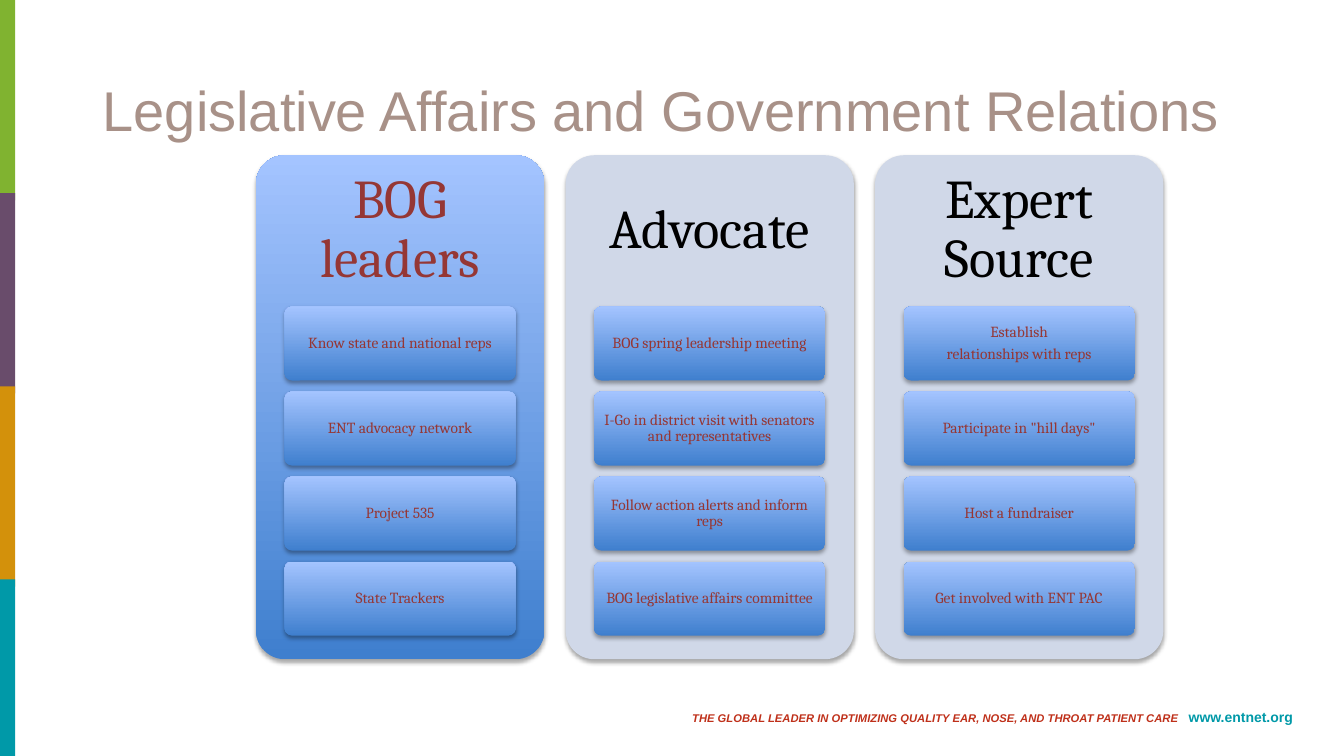
from lxml.etree import SubElement
from pptx import Presentation
from pptx.dml.color import RGBColor
from pptx.enum.shapes import MSO_SHAPE
from pptx.enum.text import MSO_ANCHOR, PP_ALIGN
from pptx.oxml.ns import qn
from pptx.util import Inches, Pt

GREEN = RGBColor(0x80, 0xB3, 0x30)
PURPLE = RGBColor(0x69, 0x4C, 0x6B)
AMBER = RGBColor(0xD3, 0x91, 0x0B)
TEAL = RGBColor(0x00, 0x99, 0xA8)
TAUPE = RGBColor(0xA8, 0x91, 0x88)
RED = RGBColor(0xBF, 0x30, 0x1A)
MAROON = RGBColor(0x95, 0x37, 0x35)
BLACK = RGBColor(0x00, 0x00, 0x00)
PALE = RGBColor(0xD0, 0xD8, 0xE8)
BLUE = RGBColor(0x3F, 0x7F, 0xCE)
LIGHT_BLUE = RGBColor(0xA4, 0xC4, 0xFF)

WIDTH, HEIGHT = Inches(13.33), Inches(7.5)
COL, ROW = WIDTH / 100, HEIGHT / 100

BAR_STEP, BAR_ROWS = 25.55, 26.5
PANEL_LEFT, PANEL_TOP, PANEL_STEP = 19.05, 20.53, 23.03
PANEL_COLS, PANEL_ROWS, HEADING_ROWS = 21.45, 66.67, 20
ITEM_COLS, ITEM_ROWS, ITEM_STEP = 17.2, 9.8, 11.25

TITLE = {"name": "Arial", "size": Pt(40)}
HEADING = {"name": "Cambria", "size": Pt(39)}
ITEM = {"name": "Cambria", "size": Pt(11)}
TAGLINE = {"name": "Arial", "size": Pt(8), "bold": True, "italic": True}
ADDRESS = {"name": "Arial", "size": Pt(10), "bold": True}

PANELS = [
    ("BOG leaders", MAROON, None, [
        "Know state and national reps",
        "ENT advocacy network",
        "Project 535",
        "State Trackers"]),
    ("Advocate", BLACK, PALE, [
        "BOG spring leadership meeting",
        "I-Go in district visit with senators and representatives",
        "Follow action alerts and inform reps",
        "BOG legislative affairs committee"]),
    ("Expert Source", BLACK, PALE, [
        "Establish\nrelationships with reps",
        'Participate in "hill days"',
        "Host a fundraiser",
        "Get involved with ENT PAC"]),
]


def cells(left, top, cols, rows):
    return [round(v) for v in (left * COL, top * ROW, cols * COL, rows * ROW)]


def add_run(p, text, style, color):
    r = p.add_run()
    r.text = text
    for key, value in style.items():
        setattr(r.font, key, value)
    r.font.color.rgb = color
    return r


def set_frame(tf, margin_x, margin_y):
    frame = {"word_wrap": True, "vertical_anchor": MSO_ANCHOR.MIDDLE,
             "margin_left": margin_x, "margin_right": margin_x,
             "margin_top": margin_y, "margin_bottom": margin_y}
    for key, value in frame.items():
        setattr(tf, key, value)


def write(tf, text, style, color, align=PP_ALIGN.CENTER):
    for i, line in enumerate(text.split("\n")):
        p = tf.add_paragraph() if i else tf.paragraphs[0]
        p.alignment = align
        p.line_spacing = 0.9
        p.space_after = round(style["size"] * 0.35)
        add_run(p, line, style, color)


def add_box(s, box, kind, color=None):
    sp = s.shapes.add_shape(kind, *box)
    sp.shadow.inherit = False
    sp.line.fill.background()
    if color is None:
        sp.fill.gradient()
        sp.fill.gradient_angle = 90
        for stop, shade in zip(sp.fill.gradient_stops, (BLUE, LIGHT_BLUE)):
            stop.color.rgb = shade
    else:
        sp.fill.solid()
        sp.fill.fore_color.rgb = color
    return sp


def add_card(s, box, color=None):
    sp = add_box(s, box, MSO_SHAPE.ROUNDED_RECTANGLE, color)
    sp.adjustments[0] = 0.1
    effects = sp._element.spPr.find(qn("a:effectLst"))
    shadow = SubElement(effects, qn("a:outerShdw"), blurRad=str(Pt(3.1)),
                        dist=str(Pt(1.8)), dir="5400000", rotWithShape="0")
    tint = SubElement(shadow, qn("a:srgbClr"), val="000000")
    SubElement(tint, qn("a:alpha"), val="35000")
    return sp


def add_text(s, box, text, style, color, margin_x, margin_y, align):
    tf = s.shapes.add_textbox(*box).text_frame
    set_frame(tf, margin_x, margin_y)
    write(tf, text, style, color, align)


def add_panel(s, left, heading, heading_color, fill, items):
    add_card(s, cells(left, PANEL_TOP, PANEL_COLS, PANEL_ROWS), fill)
    add_text(s, cells(left, PANEL_TOP, PANEL_COLS, HEADING_ROWS), heading,
             HEADING, heading_color, Inches(0.16), Inches(0.16), PP_ALIGN.CENTER)
    item_left = left + (PANEL_COLS - ITEM_COLS) / 2
    for i, item in enumerate(items):
        top = PANEL_TOP + HEADING_ROWS + i * ITEM_STEP
        sp = add_card(s, cells(item_left, top, ITEM_COLS, ITEM_ROWS))
        set_frame(sp.text_frame, Inches(0.05), Inches(0.04))
        write(sp.text_frame, item, ITEM, MAROON)


def add_footer(s):
    tf = s.shapes.add_textbox(*cells(39.23, 93.07, 57.69, 3.6)).text_frame
    set_frame(tf, Inches(0.1), Inches(0.05))
    p = tf.paragraphs[0]
    p.alignment = PP_ALIGN.RIGHT
    add_run(p, "THE GLOBAL LEADER IN OPTIMIZING QUALITY EAR, NOSE, "
               "AND THROAT PATIENT CARE", TAGLINE, RED)
    gap = add_run(p, " ", TAGLINE, RED)
    gap._r.get_or_add_rPr().set("spc", "450")
    add_run(p, "www.entnet.org", ADDRESS, TEAL)


def main():
    prs = Presentation()
    prs.slide_width, prs.slide_height = WIDTH, HEIGHT
    s = prs.slides.add_slide(prs.slide_layouts[6])
    add_footer(s)
    for i, color in enumerate((GREEN, PURPLE, AMBER, TEAL)):
        top = i * BAR_STEP
        add_box(s, cells(0, top, 1.13, min(BAR_ROWS, 100 - top)),
                MSO_SHAPE.RECTANGLE, color)
    add_text(s, cells(6.9, 5.33, 86.27, 19.33),
             "Legislative Affairs and Government Relations", TITLE, TAUPE,
             Inches(0.1), Inches(0.05), PP_ALIGN.LEFT)
    for i, panel in enumerate(PANELS):
        add_panel(s, PANEL_LEFT + i * PANEL_STEP, *panel)
    prs.save("out.pptx")


if __name__ == "__main__":
    main()
